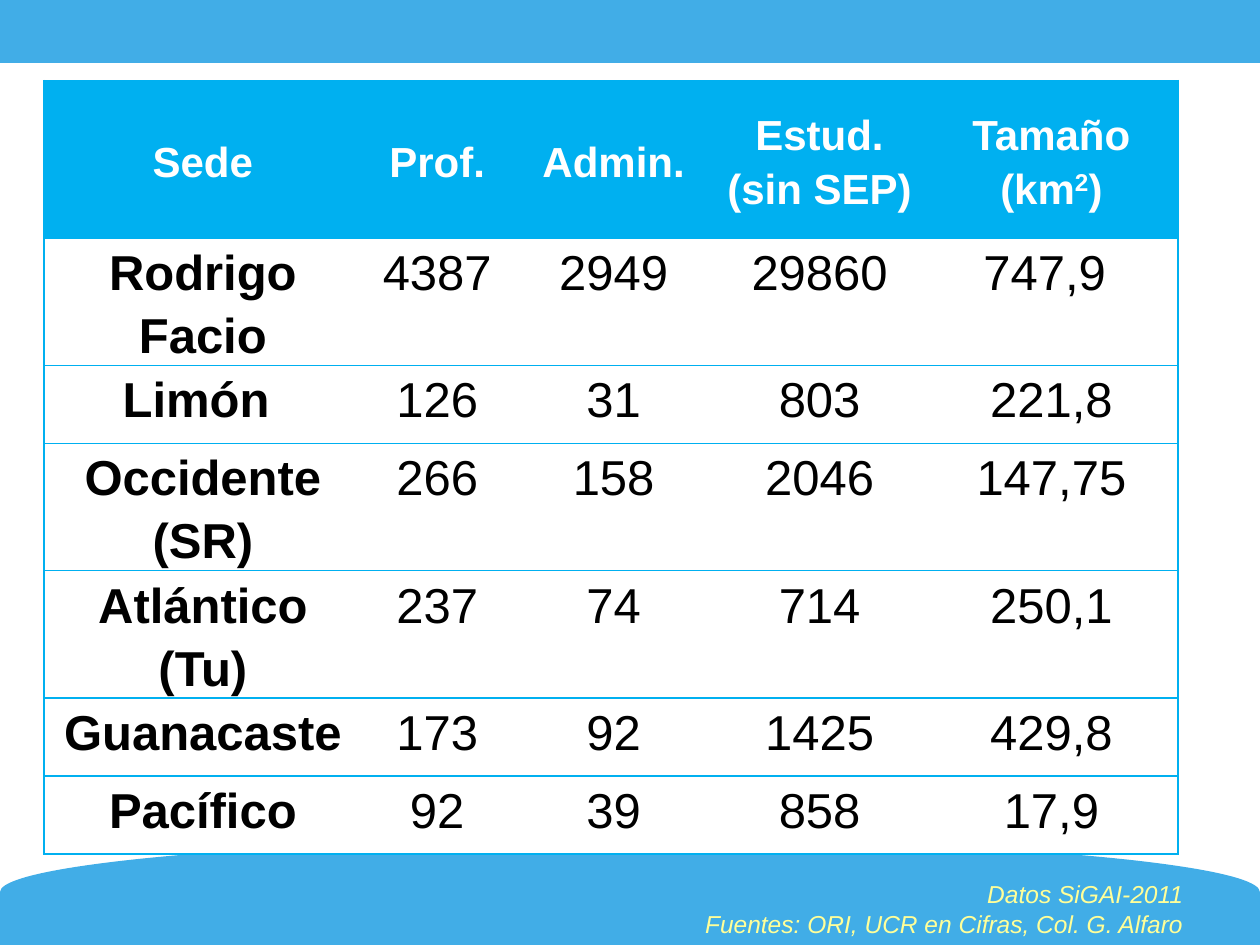
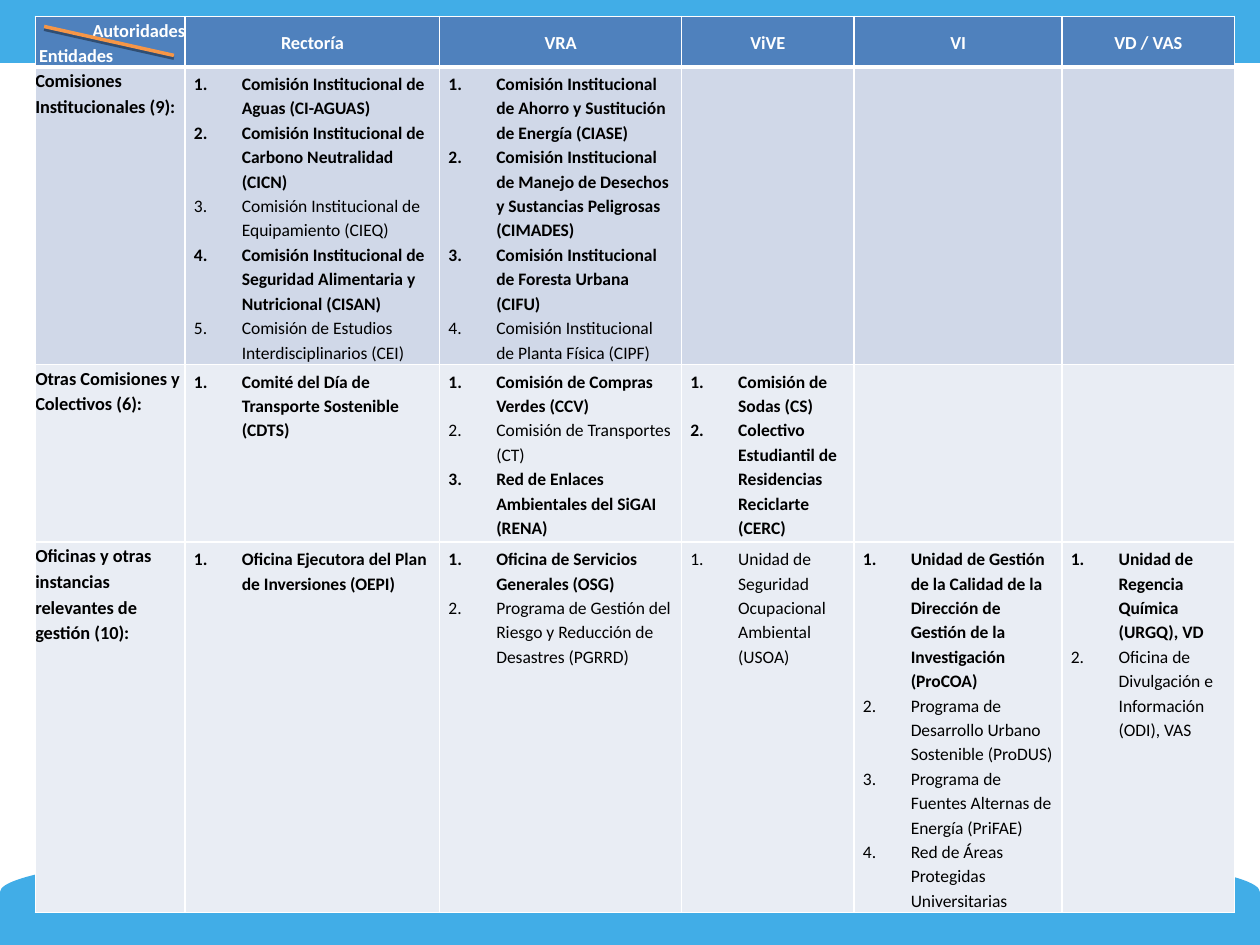
from lxml import etree
from pptx import Presentation
from pptx.dml.color import RGBColor
from pptx.enum.shapes import MSO_CONNECTOR, MSO_SHAPE
from pptx.enum.text import MSO_ANCHOR, PP_ALIGN
from pptx.oxml.ns import qn
from pptx.util import Inches, Pt

LEFT, CENTER, RIGHT = PP_ALIGN.LEFT, PP_ALIGN.CENTER, PP_ALIGN.RIGHT
TOP, MIDDLE = MSO_ANCHOR.TOP, MSO_ANCHOR.MIDDLE
RECTANGLE, DELAY = MSO_SHAPE.RECTANGLE, MSO_SHAPE.FLOWCHART_DELAY
STRAIGHT = MSO_CONNECTOR.STRAIGHT

COLORS = {
    "band": "41ADE7",
    "cyan": "00B0F0",
    "white": "FFFFFF",
    "black": "000000",
    "source": "FFFF99",
    "header": "4F81BD",
    "row_dark": "D0D8E8",
    "row_light": "E9EDF4",
    "diagonal": "F79646",
}
LINE_SPACING = 1.15
LIST_INDENT = Inches(0.38)

CAMPUS_HEADERS = ["Sede", "Prof.", "Admin.", "Estud. (sin SEP)", "Tamaño (km"]
CAMPUS_ROWS = [
    ["Rodrigo Facio", "4387", "2949", "29860", "747,9 "],
    ["Limón ", "126", "31", "803", "221,8"],
    ["Occidente (SR)", "266", "158", "2046", "147,75"],
    ["Atlántico (Tu)", "237", "74", "714", "250,1"],
    ["Guanacaste", "173", "92", "1425", "429,8"],
    ["Pacífico", "92", "39", "858", "17,9"],
]
SOURCES = ["Datos SiGAI-2011", "Fuentes: ORI, UCR en Cifras, Col. G. Alfaro"]

AUTHORITIES = ["Rectoría", "VRA", "ViVE", "VI", "VD / VAS"]
# Each row: label, fill, then one list of (entity, bold) per authority
ENTITY_ROWS = [
    ("Comisiones Institucionales (9):", "row_dark", [
        [("Comisión Institucional de Aguas (CI-AGUAS)", True),
         ("Comisión Institucional de Carbono Neutralidad (CICN)", True),
         ("Comisión Institucional de Equipamiento (CIEQ)", False),
         ("Comisión Institucional de Seguridad Alimentaria y Nutricional (CISAN)", True),
         ("Comisión de Estudios Interdisciplinarios (CEI)", False)],
        [("Comisión Institucional de Ahorro y Sustitución de Energía (CIASE)", True),
         ("Comisión Institucional de Manejo de Desechos y Sustancias Peligrosas (CIMADES)", True),
         ("Comisión Institucional de Foresta Urbana (CIFU)", True),
         ("Comisión Institucional de Planta Física (CIPF)", False)],
        [], [], [],
    ]),
    ("Otras Comisiones y Colectivos (6):", "row_light", [
        [("Comité del Día de Transporte Sostenible (CDTS)", True)],
        [("Comisión de Compras Verdes (CCV)", True),
         ("Comisión de Transportes (CT)", False),
         ("Red de Enlaces Ambientales del SiGAI (RENA)", True)],
        [("Comisión de Sodas (CS)", True),
         ("Colectivo Estudiantil de Residencias Reciclarte (CERC)", True)],
        [], [],
    ]),
    ("Oficinas y otras instancias relevantes de gestión (10):", "row_light", [
        [("Oficina Ejecutora del Plan de Inversiones (OEPI)", True)],
        [("Oficina de Servicios Generales (OSG)", True),
         ("Programa de Gestión del Riesgo y Reducción de Desastres (PGRRD)", False)],
        [("Unidad de Seguridad Ocupacional Ambiental (USOA)", False)],
        [("Unidad de Gestión de la Calidad de la Dirección de Gestión de la "
          "Investigación (ProCOA)", True),
         ("Programa de Desarrollo Urbano Sostenible (ProDUS)", False),
         ("Programa de Fuentes Alternas de Energía (PriFAE)", False),
         ("Red de Áreas Protegidas Universitarias", False)],
        [("Unidad de Regencia Química (URGQ), VD", True),
         ("Oficina de Divulgación e Información (ODI), VAS", False)],
    ]),
]


def rgb(name):
    return RGBColor.from_string(COLORS[name])


def add_run(paragraph, text, font, size, color, bold=False, italic=False):
    run = paragraph.add_run()
    run.text = text
    run.font.name, run.font.size = font, Pt(size)
    run.font.bold, run.font.italic = bold, italic
    run.font.color.rgb = rgb(color)
    return run


def next_paragraph(text_frame, align=LEFT):
    """Return the empty first paragraph, or a new one after it."""
    first = text_frame.paragraphs[0]
    paragraph = text_frame.add_paragraph() if first.runs else first
    paragraph.alignment = align
    return paragraph


def cell_paragraph(cell, align=LEFT):
    paragraph = next_paragraph(cell.text_frame, align)
    paragraph.line_spacing = LINE_SPACING
    return paragraph


def number_paragraph(paragraph):
    properties = paragraph._p.get_or_add_pPr()
    properties.set("marL", str(LIST_INDENT))
    properties.set("indent", str(-LIST_INDENT))
    etree.SubElement(properties, qn("a:buAutoNum"), type="arabicPeriod")


def style_cell(cell, fill, borders, margins, anchor=TOP):
    """Borders map L, R, T, B to (colour, points); a missing side has no line."""
    cell.margin_left = cell.margin_right = Inches(margins[0])
    cell.margin_top = cell.margin_bottom = Inches(margins[1])
    cell.vertical_anchor = anchor
    properties = cell._tc.get_or_add_tcPr()
    for side in "LRTB":
        color, width = borders.get(side, (None, 0))
        line = etree.SubElement(properties, qn(f"a:ln{side}"), w=str(Pt(width)))
        if color:
            solid = etree.SubElement(line, qn("a:solidFill"))
            etree.SubElement(solid, qn("a:srgbClr"), val=COLORS[color])
        else:
            etree.SubElement(line, qn("a:noFill"))
    cell.fill.solid()
    cell.fill.fore_color.rgb = rgb(fill)


def add_grid(slide, left, top, widths, heights):
    frame = slide.shapes.add_table(
        len(heights), len(widths), Inches(left), Inches(top),
        Inches(sum(widths)), Inches(sum(heights)))
    table = frame.table
    for column, width in zip(table.columns, widths):
        column.width = Inches(width)
    for row, height in zip(table.rows, heights):
        row.height = Inches(height)
    return table


def add_bands(slide):
    for kind, box, rotation in [(RECTANGLE, (0, 0, 10, 0.5), 0),
                                (DELAY, (4.58, 2.08, 0.84, 10), 270)]:
        band = slide.shapes.add_shape(kind, *map(Inches, box))
        band.rotation = rotation
        band.shadow.inherit = False
        band.fill.solid()
        band.fill.fore_color.rgb = rgb("band")
        band.line.fill.background()


def add_campus_table(slide, left, top):
    table = add_grid(slide, left, top, [2.52, 1.2, 1.6, 1.67, 2.01],
                     [1.25, 1.01, 0.62, 1.01, 1.01, 0.62, 0.62])
    edge = ("cyan", 1)
    last_column = len(CAMPUS_HEADERS) - 1
    for row, values in enumerate([CAMPUS_HEADERS] + CAMPUS_ROWS):
        is_header = row == 0
        fill, color, size = ("cyan", "white", 24) if is_header else ("white", "black", 28)
        for column, value in enumerate(values):
            cell = table.cell(row, column)
            borders = {"T": edge, "B": edge}
            if column == 0:
                borders["L"] = edge
            if column == last_column:
                borders["R"] = edge
            style_cell(cell, fill, borders, (0.07, 0), MIDDLE if is_header else TOP)
            add_run(cell_paragraph(cell, CENTER), value, "Arial", size, color,
                    bold=is_header or column == 0)
    size_header = table.cell(0, last_column).text_frame.paragraphs[0]
    exponent = add_run(size_header, "2", "Arial", 24, "white", bold=True)
    exponent._r.get_or_add_rPr().set("baseline", "30000")
    add_run(size_header, ")", "Arial", 24, "white", bold=True)


def add_sources(slide, left, top, width, height):
    box = slide.shapes.add_textbox(*map(Inches, (left, top, width, height)))
    box.text_frame.word_wrap = True
    for line in SOURCES:
        add_run(next_paragraph(box.text_frame, RIGHT), line, "Arial", 14, "source",
                italic=True)


def add_entity_table(slide, left, top):
    table = add_grid(slide, left, top, [1.19, 2.02, 1.92, 1.37, 1.65, 1.37],
                     [0.4, 2.36, 1.41, 2.94])
    thin, thick = ("white", 1), ("white", 3)
    thin_borders = dict.fromkeys("LRTB", thin)
    header_borders = {**thin_borders, "B": thick}

    corner = table.cell(0, 0)
    style_cell(corner, "header", header_borders, (0, 0))
    add_run(cell_paragraph(corner, RIGHT), "Autoridades", "Calibri", 10.5, "white", bold=True)
    entities = cell_paragraph(corner)
    entities._p.get_or_add_pPr().set("marL", str(Inches(0.03)))
    add_run(entities, "Entidades", "Calibri", 10.5, "white", bold=True)

    for column, authority in enumerate(AUTHORITIES, 1):
        cell = table.cell(0, column)
        style_cell(cell, "header", header_borders, (0.07, 0.03), MIDDLE)
        add_run(cell_paragraph(cell, CENTER), authority, "Calibri", 10.5, "white", bold=True)

    for row, (label, fill, groups) in enumerate(ENTITY_ROWS, 1):
        borders = {**thin_borders, "T": thick} if row == 1 else thin_borders
        label_cell = table.cell(row, 0)
        style_cell(label_cell, fill, borders, (0, 0))
        add_run(cell_paragraph(label_cell), label, "Calibri", 10.5, "black", bold=True)
        for column, group in enumerate(groups, 1):
            cell = table.cell(row, column)
            style_cell(cell, fill, borders, (0.07, 0.03))
            for entity, bold in group:
                paragraph = cell_paragraph(cell)
                number_paragraph(paragraph)
                add_run(paragraph, entity, "Calibri", 10, "black", bold=bold)


def add_corner_diagonal(slide, left, top, width, height):
    diagonal = slide.shapes.add_connector(
        STRAIGHT, *map(Inches, (left, top, left + width, top + height)))
    diagonal.line.color.rgb = rgb("diagonal")
    diagonal.line.width = Pt(2)
    effects = etree.SubElement(diagonal._element.spPr, qn("a:effectLst"))
    shadow = etree.SubElement(effects, qn("a:outerShdw"), blurRad="0",
                              dist=str(Pt(1.6)), dir="5400000", rotWithShape="0")
    color = etree.SubElement(shadow, qn("a:srgbClr"), val=COLORS["black"])
    etree.SubElement(color, qn("a:alpha"), val="38000")


def add_banded_slide(presentation):
    slide = presentation.slides.add_slide(presentation.slide_layouts[6])
    add_bands(slide)
    return slide


def build_campus_slide(presentation):
    slide = add_banded_slide(presentation)
    add_campus_table(slide, 0.35, 0.64)
    add_sources(slide, 4.37, 6.93, 5.12, 0.57)


def build_entity_slide(presentation):
    slide = add_banded_slide(presentation)
    left, top = 0.28, 0.13
    add_entity_table(slide, left, top)
    add_corner_diagonal(slide, left + 0.07, top + 0.08, 1.03, 0.23)


def main():
    presentation = Presentation()
    presentation.slide_width, presentation.slide_height = Inches(10), Inches(7.5)
    build_campus_slide(presentation)
    build_entity_slide(presentation)
    presentation.save("out.pptx")


if __name__ == "__main__":
    main()
